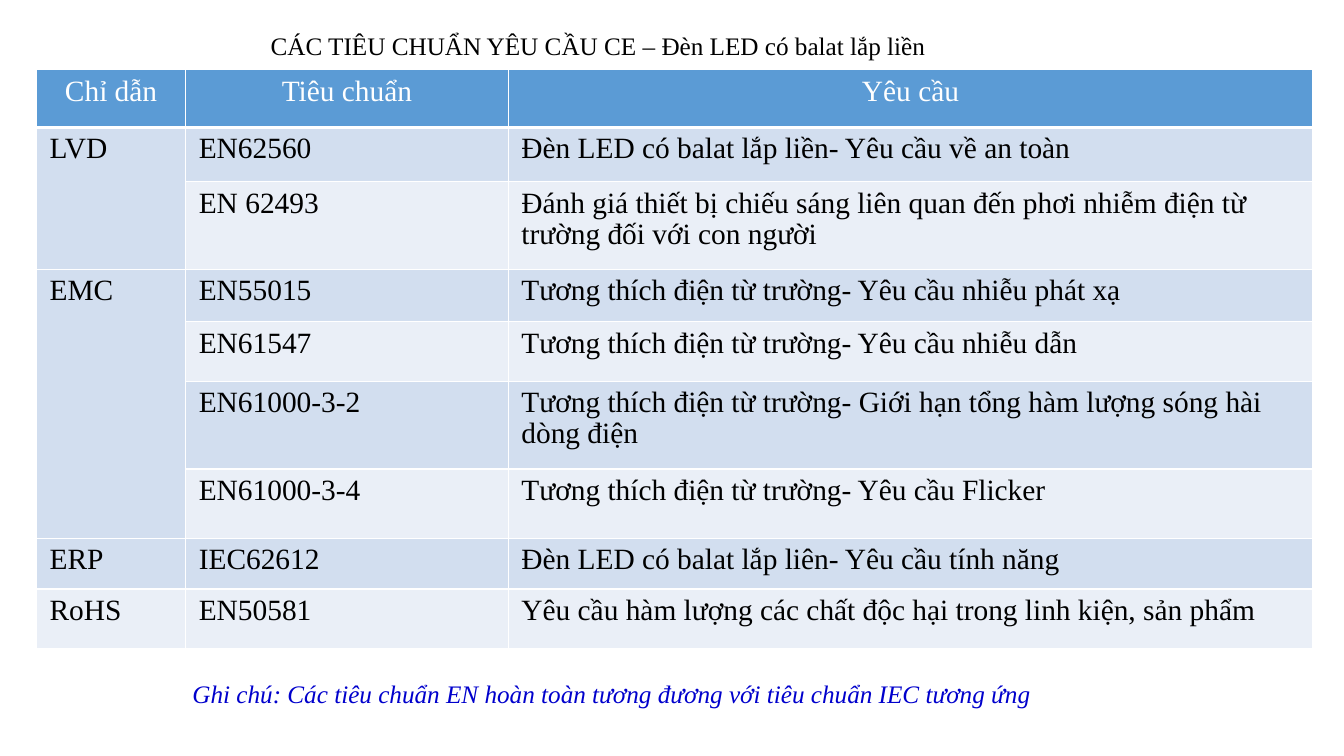
from lxml.etree import SubElement
from pptx import Presentation
from pptx.dml.color import RGBColor
from pptx.enum.text import PP_ALIGN
from pptx.oxml.ns import qn
from pptx.util import Cm, Pt

TITLE = "CÁC TIÊU CHUẨN YÊU CẦU CE – Đèn LED có balat lắp liền"
NOTE = "Ghi chú: Các tiêu chuẩn EN hoàn toàn tương đương với tiêu chuẩn IEC tương ứng"
HEADER = ("Chỉ dẫn", "Tiêu chuẩn", "Yêu cầu")
DIRECTIVES = {
    "LVD": [
        ("EN62560", "Đèn LED có balat lắp liền- Yêu cầu về an toàn"),
        ("EN 62493", "Đánh giá thiết bị chiếu sáng liên quan đến phơi nhiễm "
                     "điện từ trường đối với con người"),
    ],
    "EMC": [
        ("EN55015", "Tương thích điện từ trường- Yêu cầu nhiễu phát xạ"),
        ("EN61547", "Tương thích điện từ trường- Yêu cầu nhiễu dẫn"),
        ("EN61000-3-2", "Tương thích điện từ trường- Giới hạn tổng hàm lượng "
                        "sóng hài dòng điện"),
        ("EN61000-3-4", "Tương thích điện từ trường- Yêu cầu Flicker"),
    ],
    "ERP": [("IEC62612", "Đèn LED có balat lắp liên- Yêu cầu tính năng")],
    "RoHS": [("EN50581", "Yêu cầu hàm lượng các chất độc hại trong linh kiện, sản phẩm")],
}
COLUMN_WIDTHS = (3.76, 8.13, 20.27)
ROW_HEIGHTS = (1.45, 1.37, 2.21, 1.32, 1.5, 2.21, 1.74, 1.28, 1.5)

FONT = "Times New Roman"
BLACK = RGBColor(0x00, 0x00, 0x00)
WHITE = RGBColor(0xFF, 0xFF, 0xFF)
NOTE_BLUE = RGBColor(0x00, 0x00, 0xCC)
HEADER_BLUE = RGBColor(0x5B, 0x9B, 0xD5)
BANDS = (RGBColor(0xEA, 0xEF, 0xF7), RGBColor(0xD2, 0xDE, 0xEF))


def write(frame, text, size, color, align=PP_ALIGN.LEFT, italic=False):
    frame.text = text
    frame.word_wrap = True
    para = frame.paragraphs[0]
    para.alignment = align
    for span in para.runs:
        span.font.name = FONT
        span.font.size = Pt(size)
        span.font.color.rgb = color
        span.font.italic = italic


def add_text(slide, left, top, width, text, color, **style):
    box = slide.shapes.add_textbox(Cm(left), Cm(top), Cm(width), Cm(1.02))
    write(box.text_frame, text, 18, color, **style)


def add_borders(cell, bottom_width):
    """Draw white cell edges, placed before the fill as the schema asks."""
    properties = cell._tc.get_or_add_tcPr()
    for position, side in enumerate(("lnL", "lnR", "lnT", "lnB")):
        width = bottom_width if side == "lnB" else 1
        line = SubElement(properties, qn("a:" + side), w=str(Pt(width)))
        fill = SubElement(line, qn("a:solidFill"))
        SubElement(fill, qn("a:srgbClr"), val=str(WHITE))
        properties.insert(position, line)


def style_cell(cell, row, text):
    is_header = row == 0
    cell.margin_left = cell.margin_right = Cm(0.33)
    cell.margin_top = cell.margin_bottom = Cm(0.17)
    cell.fill.solid()
    cell.fill.fore_color.rgb = HEADER_BLUE if is_header else BANDS[row % 2]
    write(cell.text_frame, text, 21, WHITE if is_header else BLACK,
          PP_ALIGN.CENTER if is_header else PP_ALIGN.LEFT)
    cell.text_frame.paragraphs[0].line_spacing = 0.95
    add_borders(cell, 3 if is_header else 1)


def add_standards_table(slide):
    rows = [HEADER]
    merges = []
    for directive, standards in DIRECTIVES.items():
        first = len(rows)
        for index, standard in enumerate(standards):
            rows.append(("" if index else directive, *standard))
        if len(standards) > 1:
            merges.append((first, len(rows) - 1))

    table = slide.shapes.add_table(
        len(rows), len(HEADER), Cm(0.92), Cm(1.76),
        Cm(sum(COLUMN_WIDTHS)), Cm(sum(ROW_HEIGHTS))).table
    for column, width in zip(table.columns, COLUMN_WIDTHS):
        column.width = Cm(width)
    for row, height in zip(table.rows, ROW_HEIGHTS):
        row.height = Cm(height)
    for row, texts in enumerate(rows):
        for column, text in enumerate(texts):
            style_cell(table.cell(row, column), row, text)
    for first, last in merges:
        table.cell(first, 0).merge(table.cell(last, 0))


def main():
    deck = Presentation()
    deck.slide_width, deck.slide_height = Cm(33.87), Cm(19.05)
    slide = deck.slides.add_slide(deck.slide_layouts[6])
    add_text(slide, 5.13, 0.64, 19.89, TITLE, BLACK, align=PP_ALIGN.CENTER)
    add_standards_table(slide)
    add_text(slide, 4.6, 16.97, 23.24, NOTE, NOTE_BLUE, italic=True)
    deck.save("out.pptx")


if __name__ == "__main__":
    main()
